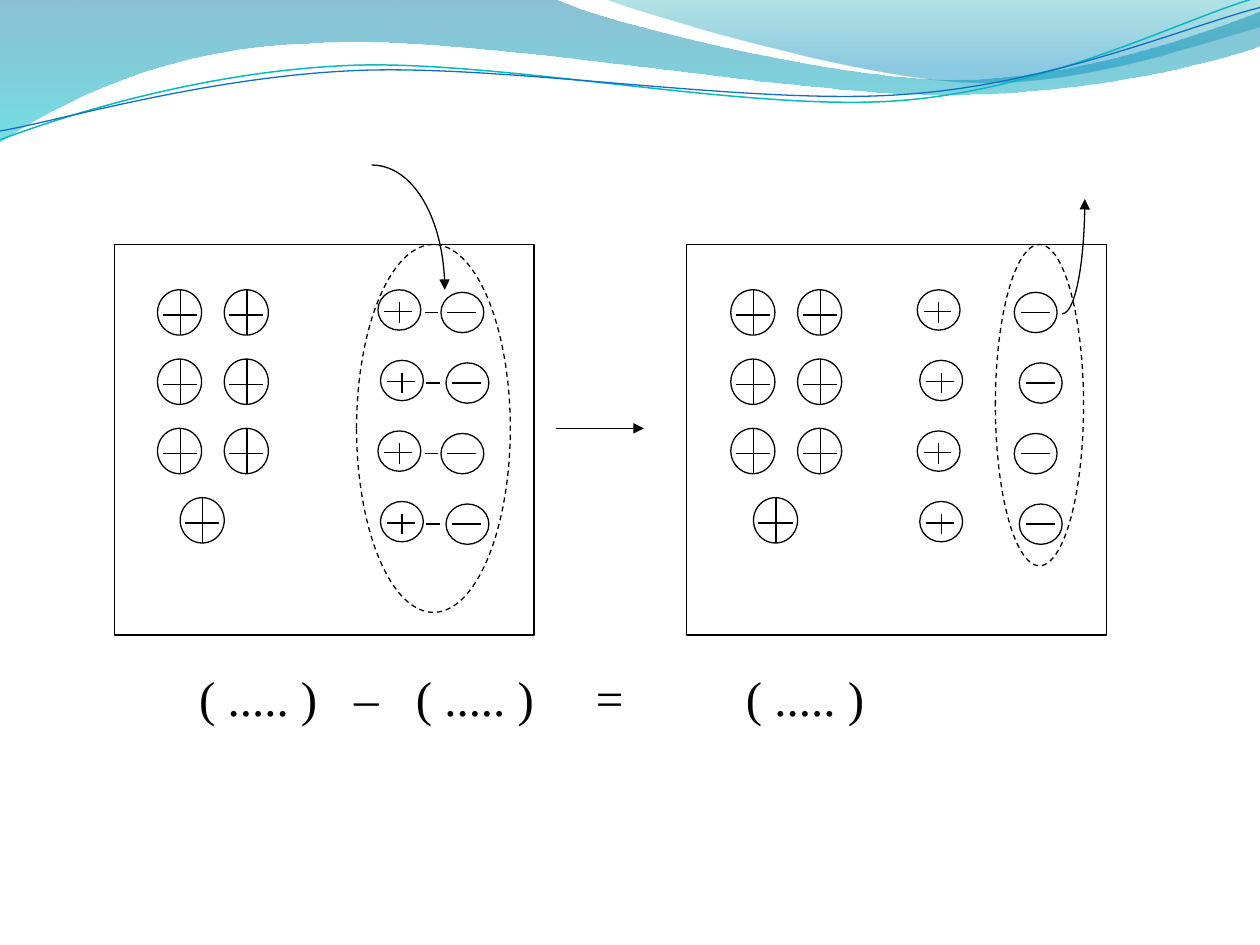
from lxml import etree
from pptx import Presentation
from pptx import util as u
from pptx.dml.color import RGBColor
from pptx.enum import dml, shapes
from pptx.oxml.ns import qn

INK = {"black": "000000", "deep": "0074A1", "aqua": "00C6CF", "teal": "00A1A9",
       "sky": "008BBF", "cyan": "0AB8BF", "blue": "0F6FC6"}

deck = Presentation()
deck.slide_width, deck.slide_height = u.Inches(10), u.Inches(7.5)
slide = deck.slides.add_slide(deck.slide_layouts[6])


def curve(start, steps, close=False):
    """Draw a freeform; a step is x, y for a line or six numbers for a Bezier."""
    x, y = (u.Inches(n) for n in start)
    pen = slide.shapes.build_freeform(x, y)
    ends = [tuple(u.Inches(n) for n in step[-2:]) for step in steps]
    pen.add_line_segments(ends, close=close)
    form = pen.convert_to_shape()
    for node, step in zip(list(form._element.iter(qn("a:lnTo"))), steps):
        if len(step) == 6:
            node.tag = qn("a:cubicBezTo")
            for i in (0, 2):
                spot = etree.Element(qn("a:pt"), x=str(u.Inches(step[i]) - form.left),
                                     y=str(u.Inches(step[i + 1]) - form.top))
                node.insert(i // 2, spot)
    form.shadow.inherit = False
    form.fill.background()
    form.line.fill.background()
    return form


def stroke(item, color="black", width=0.75):
    item.line.color.rgb = RGBColor.from_string(INK[color])
    item.line.width = u.Pt(width)


# Wave header: two translucent bands and two thin lines
bands = [
    ((-0.01, -0.01),
     [(4.4, -0.01), (4.76, 0.17, 6.64, 0.63, 7.58, 0.63), (8.53, 0.63, 9.58, 0.26, 10, 0.09),
      (10.01, 0.36), (9.83, 0.44, 8.7, 0.76, 7.46, 0.75), (6.22, 0.75, 3.82, 0.28, 2.57, 0.34),
      (1.29, 0.36, 0.46, 0.83, -0.01, 1.13)],
     [(0, "deep", 45), (1, "aqua", 55)]),
    ((4.79, -0.01),
     [(5.09, 0.11, 6.82, 0.62, 7.69, 0.65), (8.56, 0.69, 9.61, 0.32, 10, 0.21), (10, 0)],
     [(0, "teal", 30), (0.8, "sky", 45)]),
]
for start, steps, stops in bands:
    band = curve(start, steps, close=True)
    band.fill.gradient()
    band.fill.gradient_angle = 270
    for stop, (place, color, alpha) in zip(band.fill.gradient_stops, stops):
        stop.position = place
        stop.color.rgb = RGBColor.from_string(INK[color])
    tints = band._element.spPr.find(qn("a:gradFill")).iter(qn("a:srgbClr"))
    for tint, (place, color, alpha) in zip(tints, stops):
        etree.SubElement(tint, qn("a:alpha"), val=str(alpha * 1000))

stroke(curve((0, 1.11), [(0.48, 0.93, 1.58, 0.57, 2.77, 0.52), (3.95, 0.47, 5.93, 0.89, 7.13, 0.8),
                         (8.33, 0.71, 9.38, 0.15, 9.98, -0.02)]), "cyan", 0.85)
stroke(curve((0, 1.04), [(0.47, 0.96, 1.64, 0.61, 2.83, 0.56), (4.03, 0.51, 5.97, 0.84, 7.17, 0.75),
                         (8.36, 0.67, 9.41, 0.21, 10, 0.06)]), "blue")

# Panels: seven large charges, then four small positive and negative ones
rings, lines = [], []  # left, top, width, height; x1, y1, x2, y2
for shift, plus, minus in ((0, 3, 3.5), (4.55, 7.28, 8.05)):
    large = [(1.25 + 0.53 * col, 2.3 + 0.55 * row) for row in range(3) for col in range(2)]
    for x, y in large + [(1.43, 3.95)]:
        x += shift
        rings.append((x, y, 0.35, 0.36))
        lines += [(x + 0.04, y + 0.2, x + 0.31, y + 0.2),
                  (x + 0.18, y, x + 0.18, y + 0.36)]
    for row in range(4):
        odd = row % 2
        x, y = plus + 0.02 * odd, 2.3 + 0.56 * row
        rings.append((x, y, 0.34, 0.32))
        lines += [(x + 0.05, y + 0.17, x + 0.27, y + 0.17),
                  (x + 0.17, y + 0.1, x + 0.17, y + 0.26)]
        x, y = minus + 0.04 * odd, y + 0.02
        rings.append((x, y, 0.34, 0.32))
        lines.append((x + 0.05, y + 0.16, x + 0.28, y + 0.16))
        if shift == 0:
            x = 3.37 + 0.01 * odd
            lines.append((x, y + 0.16, x + 0.11, y + 0.16))

frames = [(0.91, 1.94, 3.33, 3.1), (5.45, 1.94, 3.33, 3.1)]
dashed = [(2.83, 1.94, 1.22, 2.92), (7.9, 1.94, 0.7, 2.55)]
oval, rect = shapes.MSO_SHAPE.OVAL, shapes.MSO_SHAPE.RECTANGLE
for kind, boxes in ((oval, rings), (rect, frames), (oval, dashed)):
    for box in boxes:
        item = slide.shapes.add_shape(kind, *(u.Inches(n) for n in box))
        item.shadow.inherit = False
        item.fill.background()
        stroke(item)
        if boxes is dashed:
            item.line.dash_style = dml.MSO_LINE.DASH

lines.append((4.41, 3.4, 5.11, 3.4))
for ends in lines:
    wire = slide.shapes.add_connector(shapes.MSO_CONNECTOR.STRAIGHT, *(u.Inches(n) for n in ends))
    stroke(wire)
    etree.SubElement(wire._element.spPr, qn("a:effectLst"))

# Arrows: the last line leads from panel to panel, the arcs enter and leave
arrows = [wire, curve((2.95, 1.31), [(3.27, 1.31, 3.53, 1.75, 3.53, 2.3)]),
          curve((8.43, 2.49), [(8.53, 2.49, 8.61, 2.08, 8.61, 1.58)])]
for arrow in arrows:
    stroke(arrow)
    etree.SubElement(arrow._element.spPr.find(qn("a:ln")), qn("a:tailEnd"), type="triangle")

# Equation, spaced by tab stops
note = slide.shapes.add_textbox(u.Inches(1.38), u.Inches(5.25), u.Inches(7.45), u.Inches(0.57))
frame = note.text_frame
frame.word_wrap = True
frame.margin_left = u.Inches(0.2)
frame.text = "( ..... )\t–\t( ..... )\t=\t( ..... )"
para = frame.paragraphs[0]
para.space_after = u.Pt(10)
tabs = etree.SubElement(para._p.get_or_add_pPr(), qn("a:tabLst"))
for place in (1.23, 1.72, 3.15, 4.34):
    etree.SubElement(tabs, qn("a:tab"), pos=str(u.Inches(place)), algn="l")
for run in para.runs:
    run.font.name = "Times New Roman"
    run.font.size = u.Pt(28)
    run.font.color.rgb = RGBColor.from_string(INK["black"])

deck.save("out.pptx")
